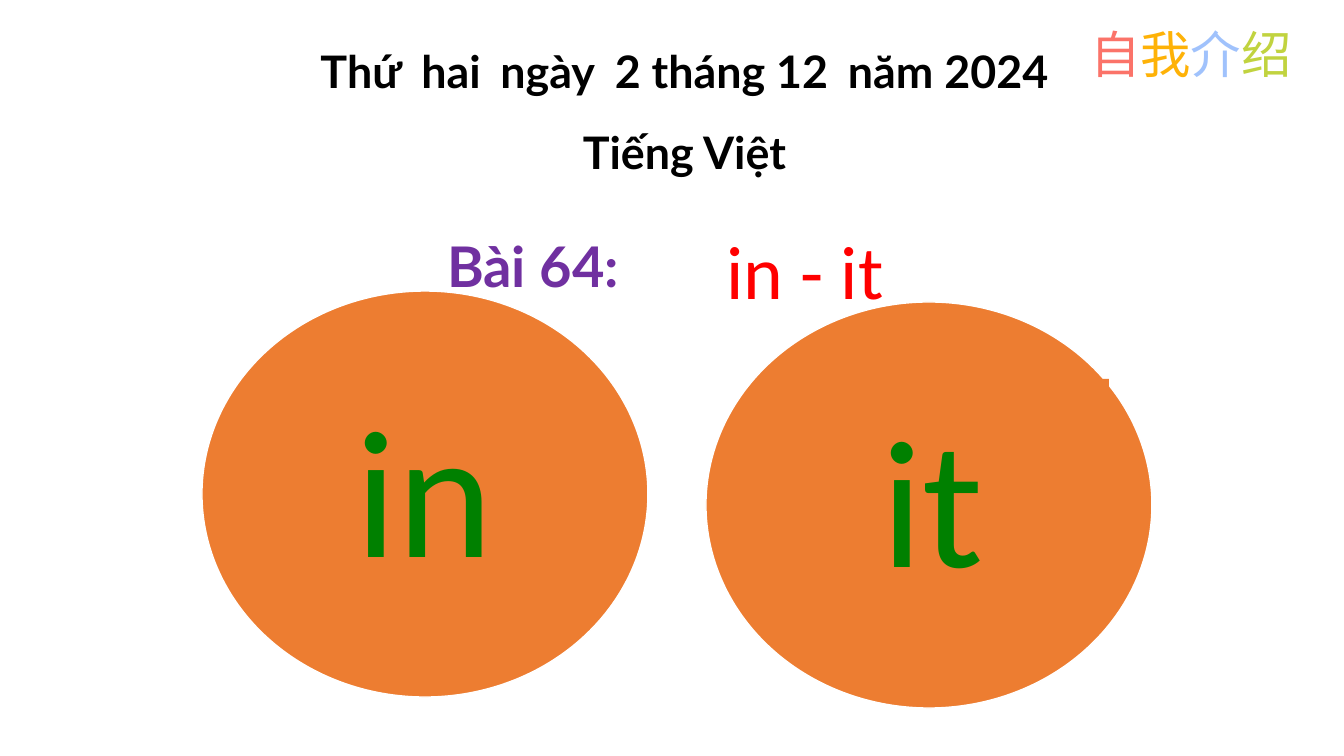
from dataclasses import dataclass

from lxml import etree
from pptx import Presentation
from pptx import util as u
from pptx.dml.color import RGBColor
from pptx.enum import shapes, text
from pptx.oxml.ns import qn

PX = 12192000 / 1344


@dataclass(frozen=True)
class Theme:
    black: str = "000000"
    red: str = "FF0000"
    purple: str = "7030A0"
    green: str = "008000"
    orange: str = "ED7D31"
    white: str = "FFFFFF"
    hues: tuple = ("FB7369", "FEB207", "A0C2FC", "C1D33F")
    latin: str = "Lato"
    plain: str = "Calibri"
    asian: str = "Noto Sans CJK JP"
    date: int = 32
    label: int = 36
    lesson: int = 40
    sounds: int = 54
    huge: int = 130
    gap: int = 620


class Board:
    def __init__(self, deck, theme):
        self.theme = theme
        self.slide = deck.slides.add_slide(deck.slide_layouts[6])

    def box(self, area):
        return [u.Emu(round(n * PX)) for n in area]

    def style(self, run, size, font, color, bold=False):
        run.font.size = u.Pt(size)
        run.font.name = font
        run.font.bold = bold
        run.font.color.rgb = RGBColor.from_string(color)
        etree.SubElement(run._r.get_or_add_rPr(), qn("a:ea"), typeface=font)

    def letter(self, shape, lines, size, font, color, bold=False, space=None):
        frame = shape.text_frame
        frame.word_wrap = True
        frame.auto_size = text.MSO_AUTO_SIZE.SHAPE_TO_FIT_TEXT
        frame.text = "\n".join(lines)
        for para in frame.paragraphs:
            para.alignment = text.PP_ALIGN.CENTER
            para.line_spacing = space
            for run in para.runs:
                self.style(run, size, font, color, bold)

    def label(self, area, lines, *look, home=None, **more):
        home = home or self.slide.shapes
        shape = home.add_textbox(*self.box(area))
        self.letter(shape, lines, *look, **more)
        return shape

    def split(self, para, parts, *look):
        """Fill a paragraph with one run per (words, color) pair."""
        for words, color in parts:
            run = para.add_run()
            run.text = words
            self.style(run, *look, color)

    def widen(self, para, parts):
        """Join parts with single spaces drawn at double width."""
        color = self.theme.black
        for i, words in enumerate(parts):
            for piece in ([" ", words] if i else [words]):
                run = para.add_run()
                run.text = piece
                self.style(run, self.theme.date, self.theme.latin, color, True)
                if piece == " ":
                    run._r.get_or_add_rPr().set("spc", str(self.theme.gap))

    def shape(self, home, kind, area, edge=None):
        item = home.add_shape(kind, *self.box(area))
        item.shadow.inherit = False
        item.fill.solid()
        item.fill.fore_color.rgb = RGBColor.from_string(self.theme.orange)
        if edge:
            item.line.color.rgb = RGBColor.from_string(edge)
            item.line.width = u.Pt(1)
        else:
            item.line.fill.background()
        return item

    def disc(self, left, top, sound, area, solid=False):
        """Group an ellipse with its sound, on a solid panel if asked."""
        t = self.theme
        home = self.slide.shapes.add_group_shape().shapes
        kind = shapes.MSO_SHAPE
        self.shape(home, kind.OVAL, (left, top, 446, 406), t.white)
        look = [sound], t.huge, t.plain, t.green
        if solid:
            self.letter(self.shape(home, kind.RECTANGLE, area), *look)
        else:
            self.label(area, *look, home=home)


def main():
    deck = Presentation()
    deck.slide_width, deck.slide_height = (u.Emu(round(n * PX)) for n in (1344, 756))
    t = Theme()
    board = Board(deck, t)

    intro = board.label((1075, 18, 232, 72), [""], t.label, t.asian, t.black)
    board.split(intro.text_frame.paragraphs[0], zip("自我介绍", t.hues), t.label, t.asian)

    head = board.label((260, 12, 849, 254), ["", "Tiếng Việt"],
                       t.date, t.latin, t.black, bold=True, space=1.5)
    board.widen(head.text_frame.paragraphs[0],
                ["Thứ", "hai", "ngày", "2 tháng 12", "năm 2024"])

    board.label((632, 174, 346, 128), ["in - it"], t.sounds, t.plain, t.red, space=1.5)
    board.label((407, 193, 252, 112), ["Bài 64:"], t.lesson, t.latin, t.purple,
                bold=True, space=1.5)

    board.disc(202, 291, "in", (231, 371, 386, 231))
    board.disc(706, 302, "it", (756, 379, 353, 231), solid=True)
    deck.save("out.pptx")


if __name__ == "__main__":
    main()
